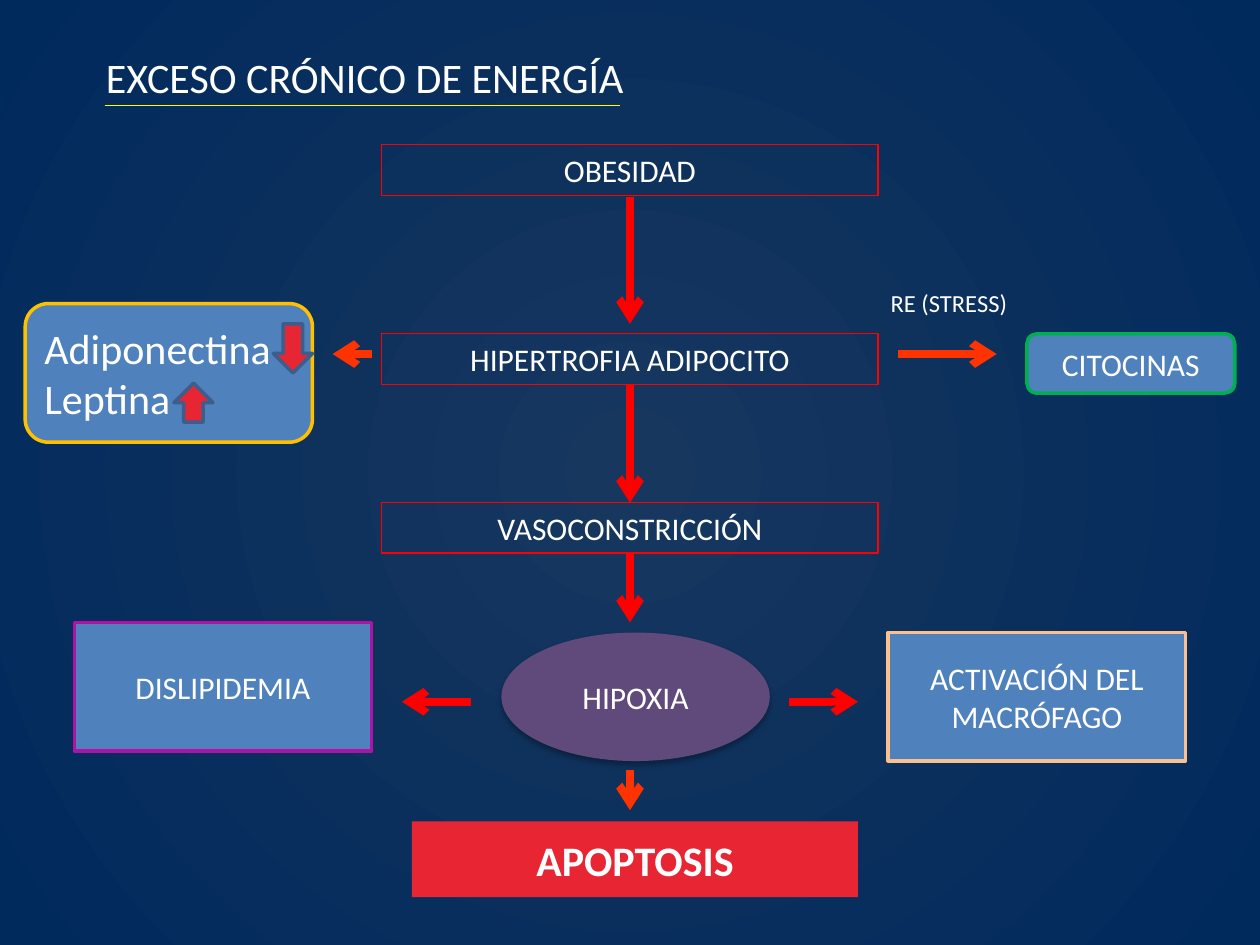
from lxml import etree
from pptx import Presentation
from pptx.dml.color import RGBColor
from pptx.enum.shapes import MSO_CONNECTOR, MSO_SHAPE
from pptx.enum.text import MSO_ANCHOR, MSO_AUTO_SIZE, PP_ALIGN
from pptx.oxml.ns import qn
from pptx.util import Inches, Pt

RECT, ROUND, OVAL = MSO_SHAPE.RECTANGLE, MSO_SHAPE.ROUNDED_RECTANGLE, MSO_SHAPE.OVAL
DOWN, STRAIGHT = MSO_SHAPE.DOWN_ARROW, MSO_CONNECTOR.STRAIGHT
TOP, MIDDLE = MSO_ANCHOR.TOP, MSO_ANCHOR.MIDDLE
LEFT, CENTER = PP_ALIGN.LEFT, PP_ALIGN.CENTER
NO_FIT = MSO_AUTO_SIZE.NONE

WHITE = RGBColor(0xFF, 0xFF, 0xFF)
RED = RGBColor(0xFF, 0x00, 0x00)
ORANGE = RGBColor(0xFF, 0x33, 0x00)
CRIMSON = RGBColor(0xE7, 0x25, 0x33)
BLUE = RGBColor(0x4F, 0x81, 0xBD)
STEEL = RGBColor(0x3A, 0x5F, 0x8C)
PURPLE = RGBColor(0x60, 0x4A, 0x7B)
PEACH = RGBColor(0xFA, 0xC0, 0x90)
MAGENTA = RGBColor(0xB0, 0x12, 0xA8)
GREEN = RGBColor(0x00, 0xB0, 0x50)
GOLD = RGBColor(0xFF, 0xC0, 0x00)
YELLOW = RGBColor(0xFF, 0xFF, 0x00)
NAVY_CENTER = RGBColor(0x17, 0x37, 0x5E)
NAVY_EDGE = RGBColor(0x00, 0x29, 0x5C)


def write(sp, text, size=18, align=CENTER, anchor=MIDDLE, bold=False):
    tf = sp.text_frame
    for name, value in {"word_wrap": True, "auto_size": NO_FIT, "vertical_anchor": anchor}.items():
        setattr(tf, name, value)
    tf.text = text
    font = {"name": "Calibri", "size": Pt(size), "bold": bold}
    for p in tf.paragraphs:
        p.alignment = align
        for r in p.runs:
            for name, value in font.items():
                setattr(r.font, name, value)
            r.font.color.rgb = WHITE


def add_box(kind, at, fill=None, line=None, width=2):
    sp = s.shapes.add_shape(kind, *[Inches(v) for v in at])
    sp.shadow.inherit = False
    for part, color in ((sp.fill, fill), (sp.line.fill, line)):
        if color is None:
            part.background()
        else:
            part.solid()
            part.fore_color.rgb = color
    if line is not None:
        sp.line.width = Pt(width)
    return sp


prs = Presentation()
prs.slide_width, prs.slide_height = Inches(10), Inches(7.5)
s = prs.slides.add_slide(prs.slide_layouts[5])

bg = s.background.fill
bg.gradient()
for stop, color, position in zip(bg.gradient_stops, (NAVY_CENTER, NAVY_EDGE), (0, 1)):
    stop.color.rgb = color
    stop.position = position
lin = s.background._cSld.find(".//" + qn("a:lin"))
grad = lin.getparent()
circle = etree.Element(qn("a:path"), path="circle")
etree.SubElement(circle, qn("a:fillToRect"), l="50000", t="50000", r="50000", b="50000")
grad.replace(lin, circle)

title = s.shapes.title
place = {"left": 0.63, "top": 0.36, "width": 4.53, "height": 0.5}
for name, value in place.items():
    setattr(title, name, Inches(value))
write(title, "EXCESO CRÓNICO DE ENERGÍA", 24, anchor=TOP)

for text, top in (("OBESIDAD", 1.15), ("HIPERTROFIA ADIPOCITO", 2.65), ("VASOCONSTRICCIÓN", 3.99)):
    write(add_box(RECT, (3.03, top, 3.94, 0.4), line=RED, width=0.75), text, anchor=TOP)

hypoxia = add_box(OVAL, (3.98, 5.02, 2.13, 1.02), PURPLE)
write(hypoxia, "HIPOXIA")
effects = hypoxia._element.spPr.find(qn("a:effectLst"))
shadow = etree.SubElement(effects, qn("a:outerShdw"), blurRad=str(Pt(3.5)), dist=str(Pt(2.2)),
                          dir="5400000", rotWithShape="0")
black = etree.SubElement(shadow, qn("a:srgbClr"), val="000000")
etree.SubElement(black, qn("a:alpha"), val="32000")

outcomes = [
    (RECT, (7.05, 5.02, 2.36, 1.02), BLUE, PEACH, "ACTIVACIÓN DEL MACRÓFAGO", {}),
    (RECT, (0.59, 4.94, 2.36, 1.02), BLUE, MAGENTA, "DISLIPIDEMIA", {}),
    (RECT, (3.27, 6.52, 3.54, 0.6), CRIMSON, None, "APOPTOSIS", {"size": 24, "bold": True}),
    (ROUND, (8.15, 2.65, 1.65, 0.47), BLUE, GREEN, "CITOCINAS", {}),
    (ROUND, (0.2, 2.41, 2.28, 1.1), BLUE, GOLD, "Adiponectina\nLeptina", {"size": 24, "align": LEFT}),
]
for kind, at, fill, line, text, style in outcomes:
    write(add_box(kind, at, fill, line), text, **style)

add_box(DOWN, (2.17, 2.57, 0.31, 0.39), CRIMSON, STEEL)
add_box(DOWN, (1.38, 3.04, 0.31, 0.31), CRIMSON, STEEL).rotation = 180

lines = [
    (5, 1.56, 5, 2.57, RED, 4.5),
    (5, 3.05, 5, 3.99, RED, 4.5),
    (5, 4.39, 5, 4.94, RED, 4.5),
    (6.26, 5.57, 6.81, 5.57, RED, 4.5),
    (3.74, 5.57, 3.19, 5.57, RED, 4.5),
    (5, 6.11, 5, 6.43, ORANGE, 4.5),
    (7.13, 2.81, 7.91, 2.81, ORANGE, 4.5),
    (2.95, 2.81, 2.64, 2.81, ORANGE, 4.5),
    (0.83, 0.84, 4.92, 0.84, YELLOW, 0.75),
]
for *ends, color, width in lines:
    cx = s.shapes.add_connector(STRAIGHT, *[Inches(v) for v in ends])
    cx.line.color.rgb = color
    cx.line.width = Pt(width)
    if width > 1:
        etree.SubElement(cx.line._get_or_add_ln(), qn("a:tailEnd"), type="arrow")
    etree.SubElement(cx._element.spPr, qn("a:effectLst"))

stress = s.shapes.add_textbox(Inches(6.97), Inches(2.24), Inches(1.73), Inches(0.34))
write(stress, "RE (STRESS)", 14, LEFT, TOP)

prs.save("out.pptx")
